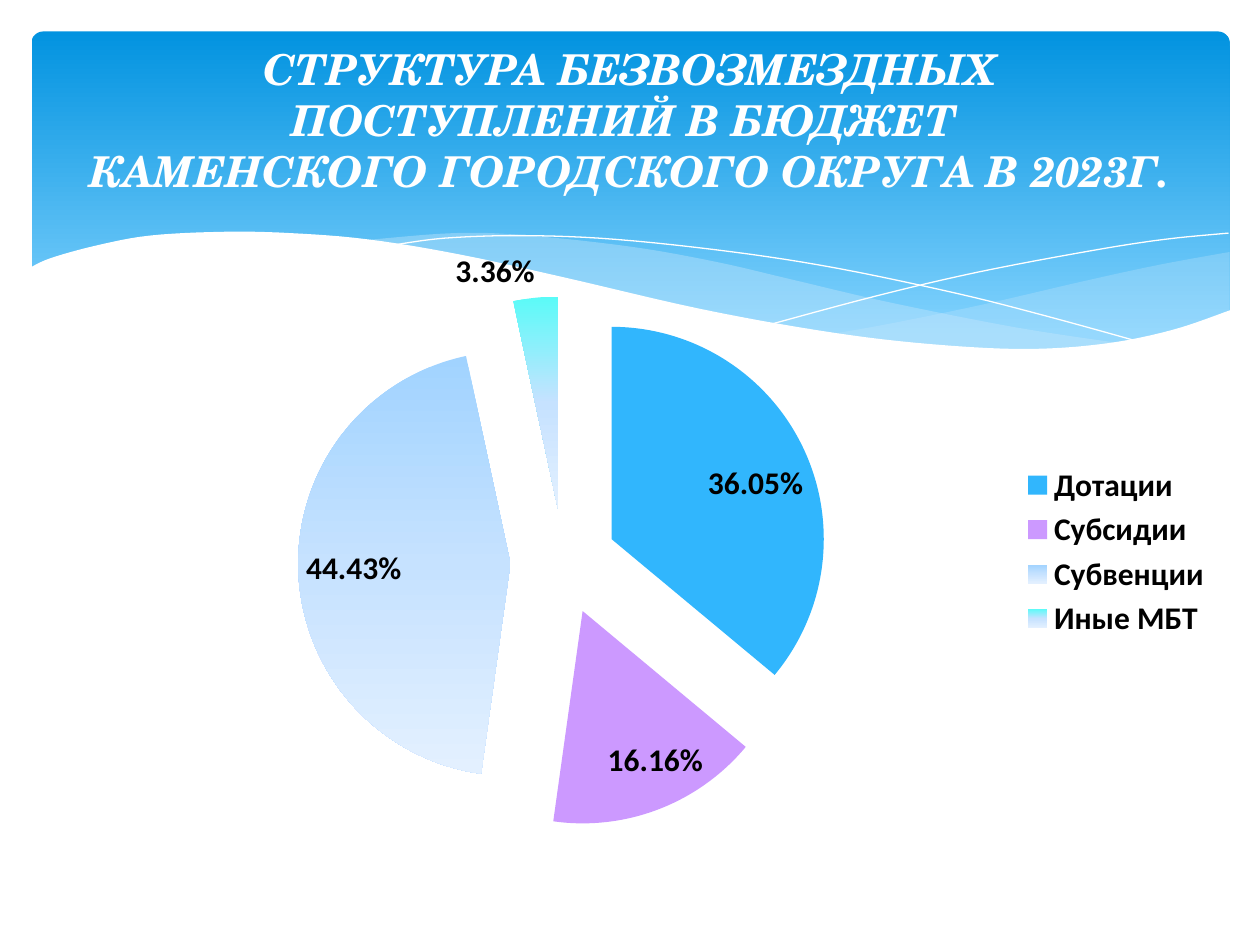
import pptx
import pptx.util
import pptx.chart.data
import pptx.dml.color
import pptx.enum.chart
import pptx.enum.shapes
import pptx.enum.text
import pptx.oxml
import pptx.oxml.ns

Inches, Pt, qn = pptx.util.Inches, pptx.util.Pt, pptx.oxml.ns.qn
RGBColor = pptx.dml.color.RGBColor
WHITE = RGBColor(0xFF, 0xFF, 0xFF)
BLACK = RGBColor(0, 0, 0)
PALE = RGBColor(0xC6, 0xE7, 0xFC)
SKY = RGBColor(0x31, 0xB6, 0xFD)
LILAC = RGBColor(0xCC, 0x99, 0xFF)
BAND = [(0, RGBColor(0x02, 0x93, 0xE0)), (90, RGBColor(0x83, 0xD3, 0xFE))]
ICE = [(50, RGBColor(0xC6, 0xE2, 0xFF)), (100, RGBColor(0xE3, 0xF0, 0xFF))]
BLUE_FADE = [(0, RGBColor(0xA1, 0xD3, 0xFF))] + ICE
CYAN_FADE = [(0, RGBColor(0x5A, 0xFB, 0xF8))] + ICE

TITLE = ("СТРУКТУРА БЕЗВОЗМЕЗДНЫХ ПОСТУПЛЕНИЙ В БЮДЖЕТ \v"
         "КАМЕНСКОГО ГОРОДСКОГО ОКРУГА В 2023Г.")
SHARES = [
    ("Дотации", 0.3605, SKY),
    ("Субсидии", 0.1616, LILAC),
    ("Субвенции", 0.4443, BLUE_FADE),
    ("Иные МБТ", 0.0336, CYAN_FADE),
]
RIGHT_WAVE = [
    [(9.76, 2), (9.21, 2.1), (8.61, 2.23), (7.79, 2.42), (7.06, 2.57), (6.61, 2.65)],
    [(6.61, 2.65), (7.05, 2.71), (7.57, 2.76), (8.14, 2.78), (8.72, 2.74),
     (9.28, 2.63), (9.76, 2.47)],
]
LONG_WAVE = [
    [(8.93, 2.73), (8.07, 2.6), (7.06, 2.4), (6.29, 2.22), (5.69, 2.08),
     (5.02, 1.96), (4.2, 1.87), (3.61, 1.85), (2.86, 1.91)],
    [(2.86, 1.91), (3.62, 2.03), (4.49, 2.22), (5.3, 2.4), (6.18, 2.58),
     (6.95, 2.7), (7.61, 2.77), (8.28, 2.78), (8.93, 2.73)],
]
FRONT_WAVE = [
    [(9.77, 2.46), (9.3, 2.62), (8.75, 2.73), (8.09, 2.77), (7.26, 2.72),
     (6.48, 2.62), (5.55, 2.45), (4.47, 2.2), (3.65, 2.02), (2.92, 1.9),
     (2.3, 1.85), (1.77, 1.84), (1.19, 1.87), (0.76, 1.95), (0.4, 2.05), (0.23, 2.13)],
    [(0.23, 3.29), (9.77, 3.29)],
]
FALLING_LINE = [(3.09, 1.95), (3.53, 1.89), (4.16, 1.87), (4.89, 1.9), (5.82, 2),
                (6.65, 2.13), (7.6, 2.33), (8.31, 2.51), (9.07, 2.72)]
RISING_LINE = [(6.13, 2.57), (6.95, 2.35), (7.76, 2.16), (8.66, 1.99),
               (9.24, 1.9), (9.75, 1.85)]


def smooth(points, steps=6):
    ends = [points[0]] + points + [points[-1]]
    out = [points[0]]
    for a, b, c, d in zip(ends, ends[1:], ends[2:], ends[3:]):
        for i in range(1, steps + 1):
            t = i / steps
            out.append(tuple(
                (2 * q + (r - p) * t + (2 * p - 5 * q + 4 * r - u) * t ** 2
                 + (3 * q - p - 3 * r + u) * t ** 3) / 2
                for p, q, r, u in zip(a, b, c, d)))
    return out


def add_curve(s, runs, closed=True, color=WHITE, alpha=100):
    points = [(Inches(x), Inches(y)) for run in runs for x, y in smooth(run)]
    fb = s.shapes.build_freeform(*points[0])
    fb.add_line_segments(points[1:], close=closed)
    sp = fb.convert_to_shape()
    sp.shadow.inherit = False
    if not closed:
        sp.fill.background()
        sp.line.color.rgb = color
        sp.line.width = Pt(0)
        return
    sp.line.fill.background()
    sp.fill.solid()
    sp.fill.fore_color.rgb = color
    if alpha < 100:
        clr = sp._element.spPr.find(qn("a:solidFill"))[0]
        pptx.oxml.ns.qn("a:alpha")
        clr.append(element("a:alpha", val=alpha * 1000))


def element(tag, **attrs):
    text = " ".join(f'{k}="{v}"' for k, v in attrs.items())
    return pptx.oxml.parse_xml(f'<{tag} {pptx.oxml.ns.nsdecls("a", "c")} {text}/>')


def fade(fill, spPr, stops):
    fill.gradient()
    fill.gradient_angle = 270
    gs_list = spPr.find(qn("a:gradFill")).find(qn("a:gsLst"))
    for gs in list(gs_list):
        gs_list.remove(gs)
    for pos, color in stops:
        gs = element("a:gs", pos=pos * 1000)
        gs.append(element("a:srgbClr", val=color))
        gs_list.append(gs)


def set_font(font, size, color=BLACK, name="Calibri", bold=True, italic=False):
    font.size, font.name, font.bold, font.italic = Pt(size), name, bold, italic
    font.color.rgb = color


def write(tf, text, **fmt):
    p = tf.paragraphs[0]
    p.text = text
    p.alignment = pptx.enum.text.PP_ALIGN.CENTER
    for r in p.runs:
        set_font(r.font, **fmt)


def add_backdrop(s):
    sp = s.shapes.add_shape(pptx.enum.shapes.MSO_SHAPE.ROUNDED_RECTANGLE,
                            Inches(0.25), Inches(0.25), Inches(9.51), Inches(2.7))
    sp.adjustments[0] = 0.034
    sp.shadow.inherit = False
    sp.line.fill.background()
    fade(sp.fill, sp._element.spPr, BAND)
    add_curve(s, RIGHT_WAVE, color=PALE, alpha=29)
    add_curve(s, LONG_WAVE, color=PALE, alpha=40)
    for line in (FALLING_LINE, RISING_LINE):
        add_curve(s, [line], closed=False)
    add_curve(s, FRONT_WAVE)


def add_title(s):
    sp = s.shapes.title
    sp.left, sp.top, sp.width, sp.height = map(Inches, (0.5, 0.37, 9, 1.37))
    tf = sp.text_frame
    tf.word_wrap = True
    tf.auto_size = pptx.enum.text.MSO_AUTO_SIZE.NONE
    tf.vertical_anchor = pptx.enum.text.MSO_ANCHOR.MIDDLE
    tf.margin_bottom = Inches(0.27)
    write(tf, TITLE, size=24.3, color=WHITE, name="TeX Gyre Schola", italic=True)
    s.shapes._spTree.append(sp._element)


def add_pie(s):
    data = pptx.chart.data.CategoryChartData(number_format="0.00%")
    data.categories = [name for name, _, _ in SHARES]
    data.add_series("Series 1", [value for _, value, _ in SHARES])
    chart = s.shapes.add_chart(pptx.enum.chart.XL_CHART_TYPE.PIE, Inches(0.35), Inches(1.78),
                               Inches(9.37), Inches(5.2), data).chart
    chart.has_title = False
    set_font(chart.font, 10, bold=False)
    chart.has_legend = True
    chart.legend.position = pptx.enum.chart.XL_LEGEND_POSITION.RIGHT
    chart.legend.include_in_layout = False
    set_font(chart.legend.font, 18)

    plot = chart.plots[0]
    plot.vary_by_categories = True
    series = plot.series[0]
    for i, (_, _, paint) in enumerate(SHARES):
        fill = series.points[i].format.fill
        if isinstance(paint, RGBColor):
            fill.solid()
            fill.fore_color.rgb = paint
        else:
            dPt = series._element.findall(qn("c:dPt"))[i]
            fade(fill, dPt.find(qn("c:spPr")), paint)
    series._element.find(qn("c:dPt")).addprevious(element("c:explosion", val=25))

    labels = series.data_labels
    labels.show_value = True
    labels.number_format = "0.00%"
    labels.number_format_is_linked = False
    labels.position = pptx.enum.chart.XL_LABEL_POSITION.BEST_FIT
    set_font(labels.font, 18)

    area = chart._chartSpace.chart.plotArea
    for old in area.findall(qn("c:layout")):
        area.remove(old)
    layout, manual = element("c:layout"), element("c:manualLayout")
    for tag, val in [("layoutTarget", "inner"), ("xMode", "edge"), ("yMode", "edge"),
                     ("x", 0.05), ("y", 0.11), ("w", 0.78), ("h", 0.81)]:
        manual.append(element("c:" + tag, val=val))
    layout.append(manual)
    area.insert(0, layout)


def main():
    prs = pptx.Presentation()
    prs.slide_width, prs.slide_height = Inches(10), Inches(7.5)
    s = prs.slides.add_slide(prs.slide_layouts[5])
    add_backdrop(s)
    add_title(s)
    add_pie(s)
    prs.save("out.pptx")


if __name__ == "__main__":
    main()
